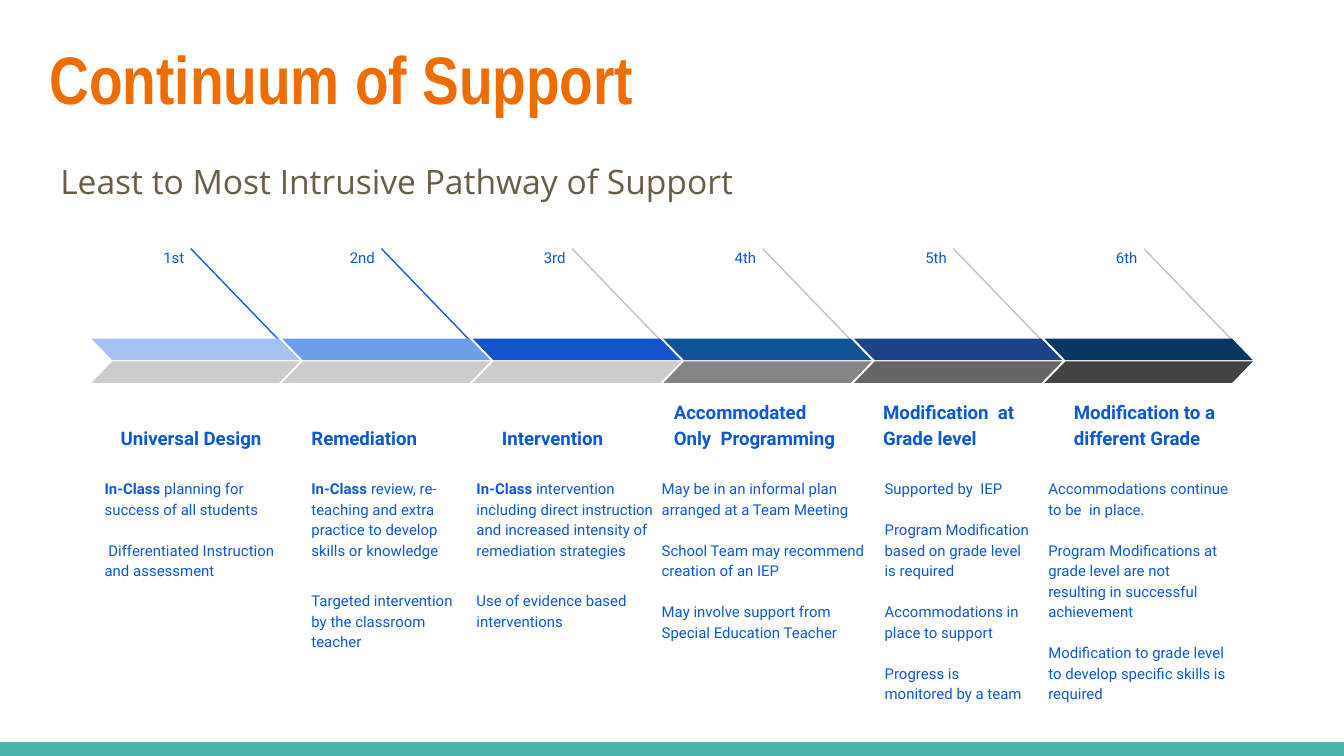
from lxml import etree
from pptx import Presentation
from pptx.dml.color import RGBColor
from pptx.enum.shapes import MSO_CONNECTOR, MSO_SHAPE
from pptx.enum.text import MSO_ANCHOR, PP_ALIGN
from pptx.oxml.ns import qn
from pptx.util import Inches, Pt

RECTANGLE = MSO_SHAPE.RECTANGLE
PARALLELOGRAM = MSO_SHAPE.PARALLELOGRAM
STRAIGHT = MSO_CONNECTOR.STRAIGHT
TOP, BOTTOM = MSO_ANCHOR.TOP, MSO_ANCHOR.BOTTOM
LEFT, RIGHT = PP_ALIGN.LEFT, PP_ALIGN.RIGHT

COLORS = {
    "footer": "4DB6AC",
    "title": "EF6C00",
    "subtitle": "695D46",
    "text": "0C58D3",
    "active": "0D5DDF",
    "inactive": "C2C2C2",
}
TITLE = {"size": Pt(36), "name": "Arial Narrow", "bold": True}
SUBTITLE = {"size": Pt(18), "name": "Open Sans", "bold": False}
HEADING = {"size": Pt(10), "name": "Roboto", "bold": True}
BODY = {"size": Pt(8), "name": "Roboto", "bold": False}
LEAD = {**BODY, "bold": True}

COLUMNS_LEFT, COLUMNS_TOP, COLUMNS_WIDTH = 0.68, 1.72, 8.51
LINE_GAP, WIDE_GAP = 11, 16

STAGES = [
    {"order": "1st", "heading": "Universal Design", "lead": "In-Class",
     "body": [" planning for success of all students",
              " Differentiated Instruction and assessment"],
     "bands": ("A4C2F4", "CCCCCC"), "line": "active",
     "heading_box": (0.12, 1.28), "body_box": (0, 1.55), "gap": LINE_GAP},
    {"order": "2nd", "heading": "Remediation", "lead": "In-Class ",
     "body": ["review, re-teaching and extra practice to develop skills or knowledge",
              "Targeted intervention by the classroom teacher"],
     "bands": ("6D9EEB", "CCCCCC"), "line": "active",
     "heading_box": (0.12, 1.28), "body_box": (0.12, 1.28), "gap": WIDE_GAP},
    {"order": "3rd", "heading": "Intervention", "lead": "In-Class ",
     "body": ["intervention  including direct instruction and increased "
              "intensity of remediation strategies",
              "Use of evidence based interventions"],
     "bands": ("1155CC", "CCCCCC"), "line": "inactive",
     "heading_box": (0.12, 1.28), "body_box": (-0.07, 1.55), "gap": WIDE_GAP},
    {"order": "4th", "heading": "Accommodated Only  Programming", "lead": "",
     "body": ["May be in an informal plan arranged at a Team Meeting",
              "School Team may recommend creation of an IEP",
              "May involve support from Special Education Teacher"],
     "bands": ("0B5394", "858585"), "line": "inactive",
     "heading_box": (-0.02, 1.42), "body_box": (-0.11, 1.71), "gap": LINE_GAP},
    {"order": "5th", "heading": "Modification  at Grade level", "lead": "",
     "body": ["Supported by  IEP",
              "Program Modification based on grade level is required",
              "Accommodations in place to support",
              "Progress is monitored by a team"],
     "bands": ("1C4587", "666666"), "line": "inactive",
     "heading_box": (0.12, 1.28), "body_box": (0.13, 1.28), "gap": LINE_GAP},
    {"order": "6th", "heading": "Modification to a different Grade", "lead": "",
     "body": ["Accommodations continue to be  in place.",
              "Program Modifications at grade level are not "
              "resulting in successful achievement",
              "Modification to grade level to develop specific skills is required"],
     "bands": ("073763", "434343"), "line": "inactive",
     "heading_box": (0.12, 1.28), "body_box": (-0.07, 1.55), "gap": LINE_GAP},
]


def add_text(slide, box, paragraphs, color, anchor=TOP, align=LEFT, spacing=1.15, gap=0):
    frame = slide.shapes.add_textbox(*map(Inches, box)).text_frame
    margins = dict.fromkeys(
        ("margin_left", "margin_top", "margin_right", "margin_bottom"), Inches(0.1))
    for key, value in {"word_wrap": True, "vertical_anchor": anchor, **margins}.items():
        setattr(frame, key, value)
    for index, runs in enumerate(paragraphs):
        paragraph = frame.add_paragraph() if index else frame.paragraphs[0]
        paragraph.alignment = align
        paragraph.line_spacing = spacing
        paragraph.space_before = Pt(gap if index else 0)
        for text, style in runs:
            run = paragraph.add_run()
            run.text = text
            run.font.color.rgb = RGBColor.from_string(COLORS[color])
            for key, value in style.items():
                setattr(run.font, key, value)


def add_filled(slide, preset, box, color):
    shape = slide.shapes.add_shape(preset, *map(Inches, box))
    shape.shadow.inherit = False
    shape.fill.solid()
    shape.fill.fore_color.rgb = RGBColor.from_string(color)
    shape.line.fill.background()
    return shape


def add_header(slide, left, top, width):
    add_text(slide, (left, top, width, 0.77),
             [[("Continuum of Support", TITLE)]], "title", spacing=1)
    add_text(slide, (left + 0.08, top + 0.87, width, 4.16),
             [[("Least to Most Intrusive Pathway of Support", SUBTITLE)]], "subtitle")


def add_pointer(slide, left, top, color):
    ends = (left, top, left + 0.79, top + 0.82)
    pointer = slide.shapes.add_connector(STRAIGHT, *map(Inches, ends))
    pointer.line.color.rgb = RGBColor.from_string(COLORS[color])
    pointer.line.width = Pt(0.75)
    etree.SubElement(pointer.element.spPr, qn("a:effectLst"))


def add_stage(slide, left, top, stage):
    add_pointer(slide, left + 0.74, top + 0.13, stage["line"])
    for row, color in enumerate(stage["bands"]):
        band = add_filled(slide, PARALLELOGRAM,
                          (left, top + 0.8 + 0.17 * row, 1.55, 0.16), color)
        band.adjustments[0] = 0.97
        if row == 0:
            band.element.spPr.find(qn("a:xfrm")).set("flipH", "1")

    offset, width = stage["heading_box"]
    add_text(slide, (left + offset, top + 1.23, width, 0.49),
             [[(stage["heading"], HEADING)]], "text", anchor=BOTTOM)

    offset, width = stage["body_box"]
    paragraphs = [[(text, BODY)] for text in stage["body"]]
    if stage["lead"]:
        paragraphs[0].insert(0, (stage["lead"], LEAD))
    add_text(slide, (left + offset, top + 1.73, width, 0.81),
             paragraphs, "text", gap=stage["gap"])
    add_text(slide, (left + 0.11, top + 0.03, 0.68, 0.26),
             [[(stage["order"], BODY)]], "text", align=RIGHT)


def add_stages(slide, left, top, width):
    pitch = width / len(STAGES)
    for index, stage in enumerate(STAGES):
        add_stage(slide, left + pitch * index, top, stage)


def main():
    presentation = Presentation()
    presentation.slide_width = Inches(10)
    presentation.slide_height = presentation.slide_width * 9 // 16
    slide = presentation.slides.add_slide(presentation.slide_layouts[6])
    add_filled(slide, RECTANGLE, (0, 5.52, 10, 0.11), COLORS["footer"])
    add_header(slide, 0.27, 0.18, 9.32)
    add_stages(slide, COLUMNS_LEFT, COLUMNS_TOP, COLUMNS_WIDTH)
    presentation.save("out.pptx")


if __name__ == "__main__":
    main()
